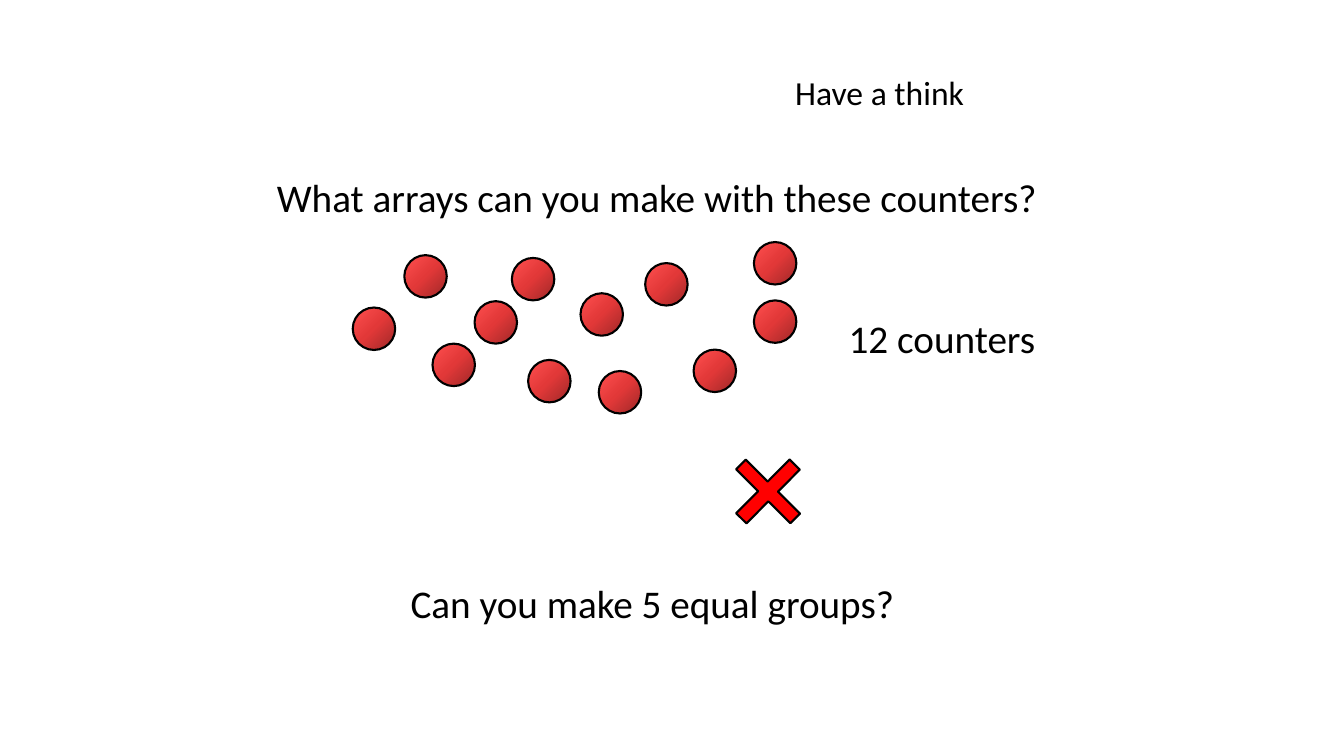
from pptx import Presentation
from pptx.dml.color import RGBColor
from pptx.enum.shapes import MSO_SHAPE
from pptx.enum.text import MSO_AUTO_SIZE, PP_ALIGN
from pptx.oxml import parse_xml
from pptx.oxml.ns import nsdecls, qn
from pptx.util import Cm, Pt

THEME = {
    "font": "Calibri",
    "ink": "000000",
    "cross": "FF0000",
    "counter": ((0, "9F2828"), (50, "E23838"), (100, "FF5050")),
    "heading": 24,
    "question": 28,
    "outline": 1.5,
}

# Text, (left, top, width, height) in cm, type size, alignment
TEXTS = [
    ("Have a think", (19.79, 1.7, 6.48, 1.27), "heading", PP_ALIGN.LEFT),
    ("What arrays can you make with these counters?",
     (6.1, 4.24, 20.9, 1.45), "question", PP_ALIGN.CENTER),
    ("Can you make 5 equal groups? ",
     (6.1, 14.48, 20.9, 1.45), "question", PP_ALIGN.CENTER),
    ("12 counters", (20.73, 7.8, 6.02, 1.45), "question", PP_ALIGN.CENTER),
]

COUNTER_SIZE = 1.07
COUNTERS = [  # left, top in cm
    (10.19, 6.43), (8.89, 7.75), (10.9, 8.66), (11.96, 7.59),
    (12.9, 6.5), (14.63, 7.39), (16.26, 6.63), (19, 7.57),
    (17.48, 8.81), (15.09, 9.35), (13.31, 9.07), (19, 6.1),
]

CROSS_BOX = (18.39, 11.43, 1.93, 1.91)
CROSS_ROTATION = 44.8
CROSS_INSET = 0.41


def add_text(slide, text, box, size, alignment):
    text_box = slide.shapes.add_textbox(*map(Cm, box))
    frame = text_box.text_frame
    frame.word_wrap = True
    frame.auto_size = MSO_AUTO_SIZE.SHAPE_TO_FIT_TEXT
    frame.text = text
    paragraph = frame.paragraphs[0]
    paragraph.alignment = alignment
    font = paragraph.runs[0].font
    font.name = THEME["font"]
    font.size = Pt(THEME[size])
    font.color.rgb = RGBColor.from_string(THEME["ink"])


def add_outlined_shape(slide, kind, box):
    shape = slide.shapes.add_shape(kind, *map(Cm, box))
    shape.shadow.inherit = False
    shape.line.color.rgb = RGBColor.from_string(THEME["ink"])
    shape.line.width = Pt(THEME["outline"])
    return shape


def fill_radially(shape, stops):
    """Fill with a circular gradient centred on the bottom right corner."""
    stop_xml = "".join(
        f'<a:gs pos="{position * 1000}"><a:srgbClr val="{color}"/></a:gs>'
        for position, color in stops
    )
    gradient = parse_xml(
        f'<a:gradFill {nsdecls("a")} rotWithShape="1"><a:gsLst>{stop_xml}</a:gsLst>'
        '<a:path path="circle"><a:fillToRect l="100000" t="100000"/></a:path>'
        "</a:gradFill>"
    )
    shape.element.spPr.find(qn("a:prstGeom")).addnext(gradient)


def main():
    presentation = Presentation()
    presentation.slide_width = Cm(33.87)
    presentation.slide_height = Cm(19.05)
    slide = presentation.slides.add_slide(presentation.slide_layouts[6])

    for text in TEXTS:
        add_text(slide, *text)

    for left, top in COUNTERS:
        box = (left, top, COUNTER_SIZE, COUNTER_SIZE)
        counter = add_outlined_shape(slide, MSO_SHAPE.OVAL, box)
        fill_radially(counter, THEME["counter"])

    cross = add_outlined_shape(slide, MSO_SHAPE.CROSS, CROSS_BOX)
    cross.adjustments[0] = CROSS_INSET
    cross.rotation = CROSS_ROTATION
    cross.fill.solid()
    cross.fill.fore_color.rgb = RGBColor.from_string(THEME["cross"])

    presentation.save("out.pptx")


if __name__ == "__main__":
    main()
